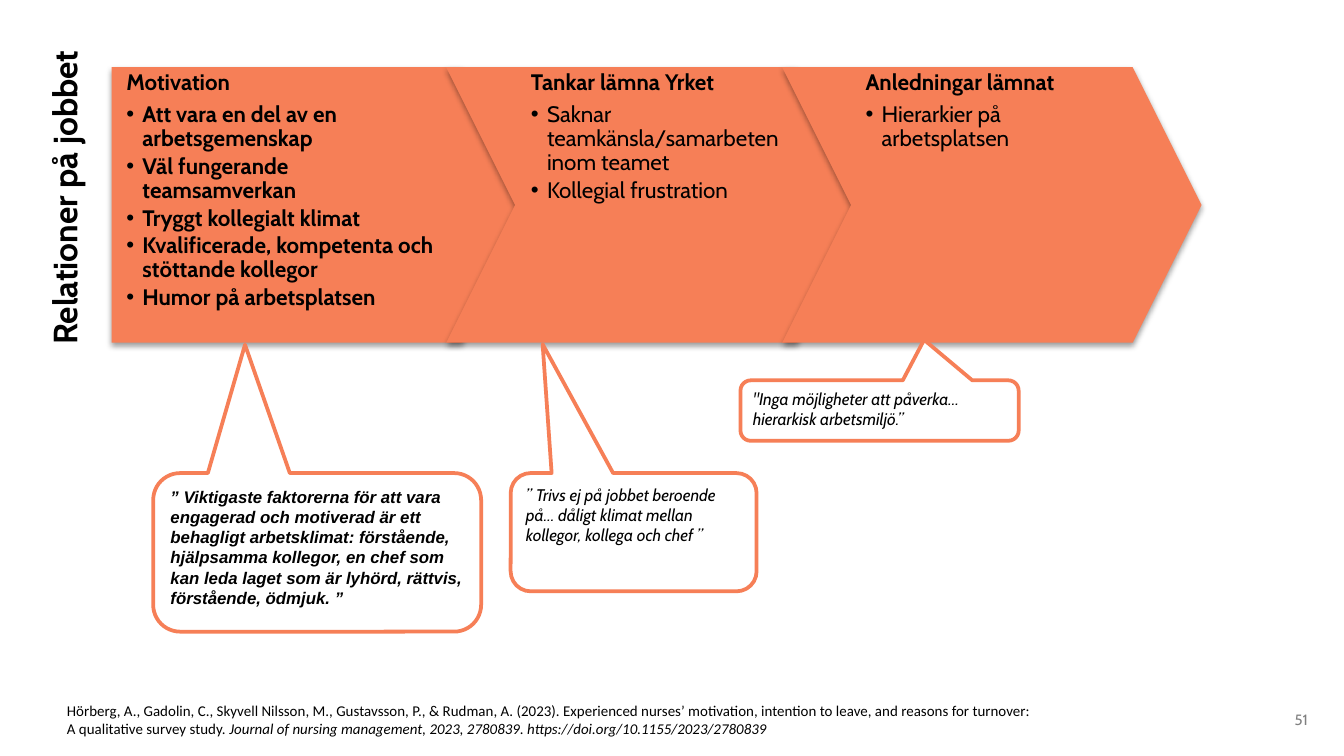
from typing import NamedTuple, Optional

from lxml.etree import SubElement
from pptx import Presentation
from pptx.dml.color import RGBColor
from pptx.enum.shapes import MSO_SHAPE
from pptx.enum.text import MSO_ANCHOR, PP_ALIGN
from pptx.oxml.ns import qn
from pptx.util import Pt

UNIT = 9144  # one px is a hundredth of an inch
CORAL, WHITE, BLACK, GRAY = "F67F57", "FFFFFF", "000000", "808080"
FONT = "Cabin"


class Box(NamedTuple):
    left: int
    top: int
    width: int
    height: int


class Step(NamedTuple):
    text: Box
    right: int
    bold: bool
    head: str
    items: list[str]


class Quote(NamedTuple):
    box: Box
    tip: tuple[float, float]
    fill: Optional[str]
    font: str
    bold: bool
    text: str


STEPS = [
    Step(Box(83, 50, 286, 205), 44, True, "Motivation", [
        "Att vara en del av en arbetsgemenskap",
        "Väl fungerande teamsamverkan",
        "Tryggt kollegialt klimat",
        "Kvalificerade, kompetenta och stöttande kollegor",
        "Humor på arbetsplatsen"]),
    Step(Box(384, 50, 209, 205), 11, False, "Tankar lämna Yrket", [
        "Saknar teamkänsla/samarbeten inom teamet",
        "Kollegial frustration"]),
    Step(Box(633, 50, 209, 205), 11, False, "Anledningar lämnat", [
        "Hierarkier på arbetsplatsen"]),
]

QUOTES = [
    Quote(Box(114, 352, 244, 118), (-0.22, -1.31), None, "Arial", True,
          "” Viktigaste faktorerna för att vara engagerad och motiverad är ett "
          "behagligt arbetsklimat: förstående, hjälpsamma kollegor, en chef som "
          "kan leda laget som är lyhörd, rättvis, förstående, ödmjuk. ”"),
    Quote(Box(380, 352, 183, 88), (-0.37, -1.59), WHITE, FONT, False,
          "” Trivs ej på jobbet beroende på… dåligt klimat mellan kollegor, "
          "kollega och chef ”"),
    Quote(Box(551, 283, 207, 45), (0.16, -1.17), WHITE, FONT, False,
          "\"Inga möjligheter att påverka… hierarkisk arbetsmiljö.”"),
]


def px(num: int) -> int:
    return num * UNIT


def rgb(code: str) -> RGBColor:
    return RGBColor.from_string(code)


def apply(part, form: dict) -> None:
    for name, value in form.items():
        setattr(part, name, value)


def style(run, size: int, color: str = BLACK, **form) -> None:
    apply(run.font, {"size": Pt(size), "name": FONT, **form})
    run.font.color.rgb = rgb(color)


def setup(shape, sides=(10, 5, 10, 5), wrap=True, anchor=MSO_ANCHOR.TOP):
    left, top, right, low = map(px, sides)
    frame = shape.text_frame
    apply(frame, {"margin_left": left, "margin_top": top,
                  "margin_right": right, "margin_bottom": low,
                  "word_wrap": wrap, "vertical_anchor": anchor})
    return frame


def draw(slide, kind, box: Box, fill: Optional[str], line: Optional[str] = None,
         wide: float = 0):
    shape = slide.shapes.add_shape(kind, *map(px, box))
    shape.shadow.inherit = False
    if fill:
        shape.fill.solid()
        shape.fill.fore_color.rgb = rgb(fill)
    else:
        shape.fill.background()
    if line:
        shape.line.color.rgb = rgb(line)
        shape.line.width = Pt(wide)
    else:
        shape.line.fill.background()
    return shape


def shade(shape) -> None:
    glow = SubElement(shape.element.spPr.find(qn("a:effectLst")), qn("a:outerShdw"),
                      blurRad="40000", dist="20000", dir="5400000", rotWithShape="0")
    tint = SubElement(glow, qn("a:srgbClr"), val=BLACK)
    SubElement(tint, qn("a:alpha"), val="38000")


def bullet(para) -> None:
    props = para._p.get_or_add_pPr()
    props.set("marL", str(px(12)))
    props.set("indent", str(px(-12)))
    SubElement(props, qn("a:buFont"), typeface="Arial")
    SubElement(props, qn("a:buChar"), char="•")


def add_step(slide, num: int, step: Step) -> None:
    kind = MSO_SHAPE.CHEVRON if num else MSO_SHAPE.PENTAGON
    arrow = draw(slide, kind, Box(83 + round(num * 249.4), 50, 312, 205), CORAL)
    arrow.adjustments[0] = 0.25
    shade(arrow)
    frame = setup(slide.shapes.add_textbox(*map(px, step.text)),
                  (11, 3, step.right, 3))
    for row, text in enumerate([step.head, *step.items]):
        para = frame.add_paragraph() if row else frame.paragraphs[0]
        if row:
            bullet(para)
        apply(para, {"line_spacing": 0.9, "space_after": Pt(1.8 if row else 4.2)})
        run = para.add_run()
        run.text = text
        style(run, 12, bold=step.bold or row == 0)


def add_quote(slide, quote: Quote) -> None:
    shape = draw(slide, MSO_SHAPE.ROUNDED_RECTANGULAR_CALLOUT, quote.box,
                 quote.fill, CORAL, 2)
    for num, value in enumerate((*quote.tip, 0.17)):
        shape.adjustments[num] = value
    para = setup(shape, (7, 4, 7, 4)).paragraphs[0]
    para.alignment = PP_ALIGN.LEFT
    run = para.add_run()
    run.text = quote.text
    style(run, 9, name=quote.font, bold=quote.bold, italic=True)


def add_label(slide, box: Box, text: str, size: int, color: str, align, bold: bool,
              wrap: bool, turn: int = 0) -> None:
    label = slide.shapes.add_textbox(*map(px, box))
    label.rotation = turn
    para = setup(label, wrap=wrap, anchor=MSO_ANCHOR.MIDDLE).paragraphs[0]
    para.alignment = align
    run = para.add_run()
    run.text = text
    style(run, size, color, bold=bold)


def add_source(slide) -> None:
    shape = draw(slide, MSO_SHAPE.RECTANGLE, Box(40, 517, 743, 37), None, WHITE, 0.5)
    para = setup(shape).paragraphs[0]
    para.alignment = PP_ALIGN.LEFT
    parts = [
        ("Hörberg, A., Gadolin, C., Skyvell Nilsson, M., Gustavsson, P., & Rudman, A. "
         "(2023). Experienced nurses’ motivation, intention to leave, and reasons for "
         "turnover: A qualitative survey study. ", False),
        ("Journal of nursing management, 2023, 2780839. "
         "https://doi.org/10.1155/2023/2780839", True),
    ]
    for text, slant in parts:
        run = para.add_run()
        run.text = text
        style(run, 8, name="Calibri", italic=slant)


def main() -> None:
    deck = Presentation()
    wide = px(1000)
    apply(deck, {"slide_width": wide, "slide_height": wide * 9 // 16})
    slide = deck.slides.add_slide(deck.slide_layouts[6])

    # Page number
    add_label(slide, Box(908, 526, 75, 19), "51", 8, GRAY, PP_ALIGN.RIGHT, False, True)
    # Arrow steps
    for num, step in enumerate(STEPS):
        add_step(slide, num, step)
    # Upright title
    add_label(slide, Box(-73, 127, 241, 40), "Relationer på jobbet", 18, BLACK,
              PP_ALIGN.CENTER, True, False, 270)
    # Quotes
    for quote in QUOTES:
        add_quote(slide, quote)
    # Reference
    add_source(slide)
    deck.save("out.pptx")


if __name__ == "__main__":
    main()
